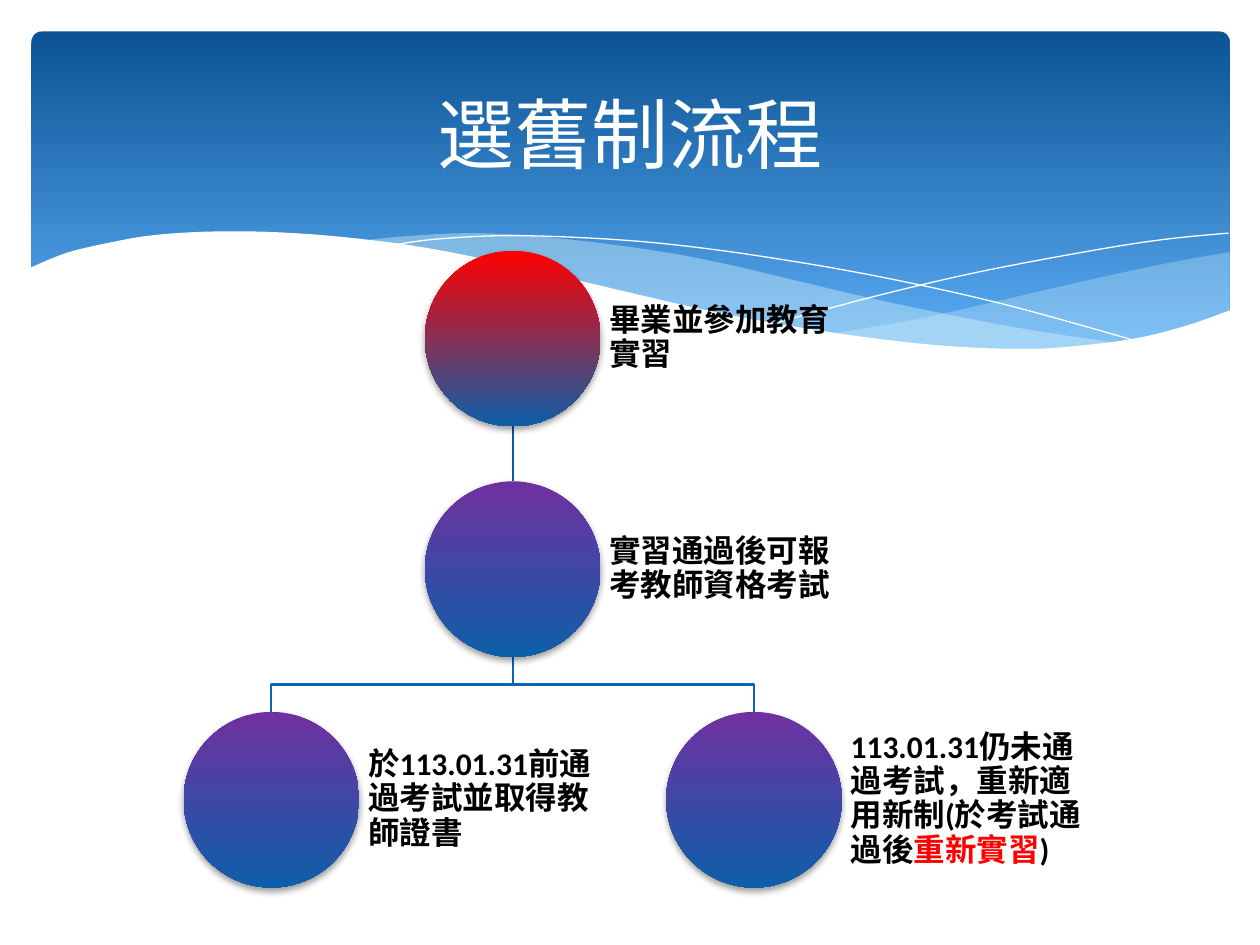
from lxml.etree import SubElement
from pptx import Presentation
from pptx.dml.color import RGBColor
from pptx.enum.shapes import MSO_CONNECTOR, MSO_SHAPE
from pptx.enum.text import MSO_ANCHOR as Anchor, PP_ALIGN as Align
from pptx.oxml import parse_xml
from pptx.oxml.ns import nsdecls, qn
from pptx.util import Inches, Pt

WHITE = RGBColor(0xFF, 0xFF, 0xFF)
BLACK = RGBColor(0x00, 0x00, 0x00)
RED = RGBColor(0xFF, 0x00, 0x00)
PURPLE = RGBColor(0x70, 0x30, 0xA0)
NODE_BLUE = RGBColor(0x0D, 0x5F, 0xA9)
LINK_BLUE = RGBColor(0x0E, 0x65, 0xB4)
TRUNK_BLUE = RGBColor(0x0C, 0x59, 0x9F)
BANNER_DARK = RGBColor(0x0B, 0x53, 0x94)
BANNER_LIGHT = RGBColor(0x59, 0xAA, 0xF2)
PALE_AQUA = RGBColor(0xDB, 0xF5, 0xF9)

# All lengths are in cells of a grid of 100 columns by 75 rows.
COLUMNS, ROWS = 100, 75
DIAMETER, LABEL_WIDTH = 13.94, 20.9
FIRST_X, STEP_X = 14.57, 19.15
FIRST_Y, STEP_Y = 19.9, 18.3

RIGHT_RIBBON_TOP = [(97.6, 20), (92.1, 21), (86.1, 22.3), (77.9, 24.2), (72.9, 25.3), (66.1, 26.5)]
RIGHT_RIBBON_BOTTOM = [(66.1, 26.5), (71.9, 27.2), (76.9, 27.7), (81.4, 27.8), (86.3, 27.5),
                       (90.5, 26.9), (94.2, 25.9), (97.6, 24.7)]
LONG_RIBBON_TOP = [(89.3, 27.3), (80.7, 26), (70.6, 24), (62.9, 22.2), (56.9, 20.8), (51.4, 19.8),
                   (44.2, 18.9), (38, 18.5), (32.8, 18.7), (28.6, 19.1)]
LONG_RIBBON_BOTTOM = [(28.6, 19.1), (34.2, 19.9), (40.4, 21.1), (49.1, 23.2), (56.6, 24.8),
                      (63.4, 26.1), (69.5, 27), (76.1, 27.7), (81.8, 27.8), (86.7, 27.6), (89.3, 27.3)]
FALLING_LINE = [(30.9, 19.5), (34.4, 19), (40.1, 18.7), (46.9, 18.9), (53.3, 19.4), (60.8, 20.4),
                (69.5, 21.9), (79.5, 24.1), (90.7, 27.2)]
RISING_LINE = [(61.3, 25.7), (69.5, 23.5), (77.6, 21.6), (86.6, 19.9), (92.4, 19), (97.5, 18.5)]
WAVE = [(97.7, 24.6), (94, 25.9), (89.9, 26.9), (85, 27.5), (80.9, 27.7), (74.4, 27.4), (66.8, 26.5),
        (57.9, 25), (50.3, 23.3), (41.8, 21.3), (34, 19.7), (27.1, 18.8), (21.1, 18.4), (16.1, 18.4),
        (11.9, 18.7), (8.5, 19.3), (5.2, 20.1), (2.3, 21.3)]

LABEL = {"size": Pt(18), "name": "Calibri", "bold": True}
TITLE = {"size": Pt(44), "name": "Noto Sans CJK JP"}
# Column and row in the tree, top colour, runs of the label
NODES = [
    (1, 0, RED, [("畢業並參加教育實習", BLACK)]),
    (1, 1, PURPLE, [("實習通過後可報考教師資格考試", BLACK)]),
    (0, 2, PURPLE, [("於113.01.31前通過考試並取得教師證書", BLACK)]),
    (2, 2, PURPLE, [("113.01.31仍未通過考試，重新適用新制(於考試通過後", BLACK),
                    ("重新實習", RED), (")", BLACK)]),
]


def smooth(points, steps=5):
    """Return points on a Catmull-Rom curve through the given points."""
    padded = [points[0], *points, points[-1]]
    curve = [points[0]]
    for a, b, c, d in zip(padded, padded[1:], padded[2:], padded[3:]):
        for step in range(1, steps + 1):
            t = step / steps
            curve.append(tuple(
                (2 * q + (r - p) * t + (2 * p - 5 * q + 4 * r - s) * t ** 2
                 + (3 * q - p - 3 * r + s) * t ** 3) / 2
                for p, q, r, s in zip(a, b, c, d)))
    return curve


class SlideBuilder:
    """Holds the current slide, its grid and its style."""

    def __init__(self, presentation):
        self.slide = presentation.slides.add_slide(presentation.slide_layouts[6])
        self.shapes = self.slide.shapes
        self.column = presentation.slide_width / COLUMNS
        self.row = presentation.slide_height / ROWS

    def place(self, x, y):
        return round(x * self.column), round(y * self.row)

    def gradient_shape(self, kind, box, top, bottom, end=1.0):
        shape = self.shapes.add_shape(kind, *self.place(*box[:2]), *self.place(*box[2:]))
        shape.shadow.inherit = False
        shape.line.fill.background()
        shape.fill.gradient()
        shape.fill.gradient_angle = 270
        for stop, color, position in zip(shape.fill.gradient_stops, (top, bottom), (0, end)):
            stop.color.rgb = color
            stop.position = position
        return shape

    def outline(self, points, closed):
        start, *others = [self.place(*point) for point in points]
        builder = self.shapes.build_freeform(*start)
        builder.add_line_segments(others, close=closed)
        shape = builder.convert_to_shape()
        shape.shadow.inherit = False
        return shape

    def area(self, points, color, opacity=100):
        shape = self.outline(points, True)
        shape.line.fill.background()
        shape.fill.solid()
        shape.fill.fore_color.rgb = color
        if opacity < 100:
            rgb = shape._element.spPr.find(".//" + qn("a:srgbClr"))
            SubElement(rgb, qn("a:alpha"), val=str(opacity * 1000))

    def polyline(self, points, color, width):
        shape = self.outline(points, False)
        shape.fill.background()
        shape.line.color.rgb = color
        shape.line.width = Pt(width)

    def straight(self, start, end, color, width):
        line = self.shapes.add_connector(MSO_CONNECTOR.STRAIGHT, *self.place(*start), *self.place(*end))
        line.line.color.rgb = color
        line.line.width = Pt(width)
        SubElement(line._element.spPr, qn("a:effectLst"))

    def text(self, box, runs, font, align=Align.LEFT, inset=0.07, spacing=1.0):
        shape = self.shapes.add_textbox(*self.place(*box[:2]), *self.place(*box[2:]))
        frame = shape.text_frame
        frame.word_wrap = True
        frame.vertical_anchor = Anchor.MIDDLE
        for side in ("left", "top", "right", "bottom"):
            setattr(frame, f"margin_{side}", Inches(inset))
        paragraph = frame.paragraphs[0]
        paragraph.alignment = align
        paragraph.line_spacing = spacing
        for content, color in runs:
            run = paragraph.add_run()
            run.text = content
            for key, value in font.items():
                setattr(run.font, key, value)
            run.font.color.rgb = color
            SubElement(run._r.get_or_add_rPr(), qn("a:ea"), typeface="Noto Sans CJK JP")

    def node(self, column, row, color, runs):
        x, y = FIRST_X + column * STEP_X, FIRST_Y + row * STEP_Y
        circle = self.gradient_shape(MSO_SHAPE.OVAL, (x, y, DIAMETER, DIAMETER), color, NODE_BLUE)
        properties = circle._element.spPr
        properties.remove(properties.find(qn("a:effectLst")))
        properties.append(parse_xml(
            f'<a:effectLst {nsdecls("a")}><a:outerShdw blurRad="{Pt(4)}" dist="{Pt(2)}" dir="5400000" '
            'rotWithShape="0"><a:srgbClr val="000000"><a:alpha val="38000"/></a:srgbClr>'
            '</a:outerShdw></a:effectLst>'))
        self.text((x + DIAMETER, y, LABEL_WIDTH, DIAMETER), runs, LABEL, spacing=0.9)


def draw_banner(builder):
    banner = builder.gradient_shape(MSO_SHAPE.ROUNDED_RECTANGLE, (2.5, 2.5, 95.1, 27),
                                    BANNER_DARK, BANNER_LIGHT, 0.9)
    banner.adjustments[0] = 0.03
    builder.area(smooth(RIGHT_RIBBON_TOP) + smooth(RIGHT_RIBBON_BOTTOM), PALE_AQUA, 29)
    builder.area(smooth(LONG_RIBBON_TOP) + smooth(LONG_RIBBON_BOTTOM), PALE_AQUA, 40)
    for line in (FALLING_LINE, RISING_LINE):
        builder.polyline(smooth(line), WHITE, 0)
    builder.area(smooth(WAVE) + [(2.3, 32.9), (97.7, 32.9)], WHITE)
    builder.text((5, 3.7, 90, 13.7), [("選舊制流程", WHITE)], TITLE, Align.CENTER, 0.1)


def draw_tree(builder):
    centers = [FIRST_X + column * STEP_X + DIAMETER / 2 for column in range(3)]
    tops = [FIRST_Y + row * STEP_Y for row in range(3)]
    fork = tops[1] + DIAMETER
    middle = (fork + tops[2]) / 2
    for child in (centers[2], centers[0]):
        builder.polyline([(centers[1], fork), (centers[1], middle), (child, middle), (child, tops[2])],
                         LINK_BLUE, 1.25)
    builder.straight((centers[1], tops[0] + DIAMETER), (centers[1], tops[1]), TRUNK_BLUE, 1.25)
    for node in NODES:
        builder.node(*node)


def main():
    presentation = Presentation()
    presentation.slide_width, presentation.slide_height = Inches(10), Inches(7.5)
    builder = SlideBuilder(presentation)
    draw_banner(builder)
    draw_tree(builder)
    presentation.save("out.pptx")


if __name__ == "__main__":
    main()
